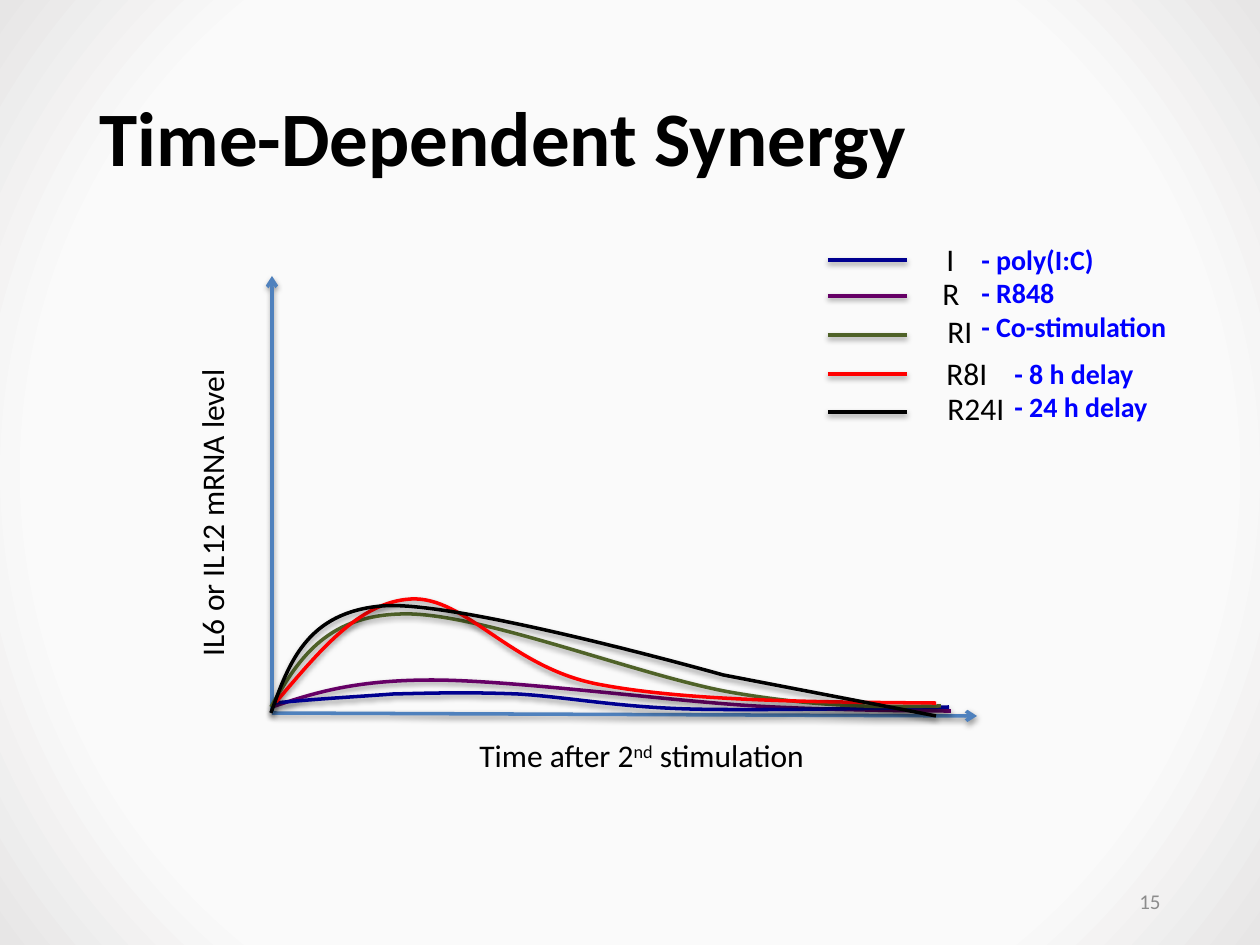
from dataclasses import dataclass

from lxml import etree
from pptx import Presentation
from pptx import util as u
from pptx.dml import color
from pptx.enum import shapes, text
from pptx.oxml import ns


@dataclass(frozen=True)
class Theme:
    font: str = "Calibri"
    ink: str = "000000"
    note: str = "0000FF"
    number: str = "8C8C8C"
    axis: str = "4F81BD"
    center: str = "FAFAFA"
    edge: str = "E7E6E6"
    title_size: int = 44
    label_size: int = 18
    note_size: int = 16
    number_size: int = 12
    line_width: int = 2


THEME = Theme()
SCALE = 914400 / 126
TITLE = "Time-Dependent Synergy"
TITLE_AREA = (87, 50, 1086, 183)
AXES = [((272, 713), (977, 716)), ((272, 713), (272, 276))]
LEGEND_X = (828, 907)
LABEL_HEIGHT = 50

SERIES = [
    {"name": "I", "color": "000090", "key_y": 260, "label": (934, 234, 84),
     "start": (275, 703),
     "points": [(314, 699), (353, 697), (393, 694),
                (433, 693), (469, 692), (518, 694),
                (567, 697), (617, 707), (689, 709),
                (761, 711), (949, 707), (949, 707)]},
    {"name": "R", "color": "660066", "key_y": 296, "label": (930, 268, 84),
     "start": (272, 707),
     "points": [(311, 694), (352, 680), (432, 680),
                (513, 680), (669, 701), (756, 706),
                (843, 711), (951, 711), (951, 711)]},
    {"name": "RI", "color": "4F6228", "key_y": 335, "label": (935, 306, 105),
     "start": (271, 707),
     "points": [(297, 662), (324, 616), (401, 614),
                (478, 611), (644, 678), (735, 693),
                (824, 708), (883, 707), (941, 706)]},
    {"name": "R8I", "color": "FF0000", "key_y": 374, "label": (934, 348, 105),
     "start": (276, 702),
     "points": [(318, 653), (358, 602), (411, 599),
                (465, 596), (510, 667), (597, 684),
                (684, 701), (810, 702), (936, 703)]},
    {"name": "R24I", "color": "000000", "key_y": 412, "label": (935, 383, 105),
     "start": (271, 713),
     "points": [(289, 663), (307, 612), (383, 606),
                (457, 600), (723, 675), (723, 675),
                (936, 716)]},
]
NOTES = [
    (["- poly(I:C)", "- R848", "- Co-stimulation"], (969, 236, 239, 115)),
    (["- 8 h delay", "- 24 h delay"], (1002, 350, 168, 81)),
]
Y_LABEL = ("IL6 or IL12 mRNA level", (30, 462, 363, LABEL_HEIGHT))
X_LABEL = (["Time after 2", "nd", " stimulation"], (467, 730, 406, LABEL_HEIGHT))
PAGE_NUMBER = ("15", (890, 876, 283, 50))


def px(value):
    return u.Emu(round(value * SCALE))


def rgb(value):
    return color.RGBColor.from_string(value)


def write(box, lines, size=THEME.label_size, ink=THEME.ink, bold=False,
          align=text.PP_ALIGN.LEFT, anchor=text.MSO_ANCHOR.TOP,
          spacing=1.0, raised=None):
    frame = box.text_frame
    frame.word_wrap = True
    frame.auto_size = text.MSO_AUTO_SIZE.NONE
    frame.vertical_anchor = anchor
    for index, line in enumerate(lines):
        para = frame.paragraphs[0] if index == 0 else frame.add_paragraph()
        para.alignment = align
        para.line_spacing = spacing
        for piece in [line] if isinstance(line, str) else line:
            span = para.add_run()
            span.text = piece
            span.font.name = THEME.font
            span.font.size = u.Pt(size)
            span.font.bold = bold
            span.font.color.rgb = rgb(ink)
            if piece == raised:
                span.font._element.set("baseline", "30000")


def add_text(page, lines, area, **style):
    box = page.shapes.add_textbox(*map(px, area))
    write(box, lines, **style)
    return box


def style_line(shape, ink, arrow=False):
    shape.line.color.rgb = rgb(ink)
    shape.line.width = u.Pt(THEME.line_width)
    properties = shape.element.find(ns.qn("p:spPr"))
    if arrow:
        stroke = properties.find(ns.qn("a:ln"))
        etree.SubElement(stroke, ns.qn("a:tailEnd"), type="arrow")
    effects = etree.SubElement(properties, ns.qn("a:effectLst"))
    shadow = etree.SubElement(effects, ns.qn("a:outerShdw"), blurRad="40000",
                              dist="20000", dir="5400000", rotWithShape="0")
    shade = etree.SubElement(shadow, ns.qn("a:srgbClr"), val=THEME.ink)
    etree.SubElement(shade, ns.qn("a:alpha"), val="38000")


def add_line(page, start, end, ink, arrow=False):
    line = page.shapes.add_connector(
        shapes.MSO_CONNECTOR.STRAIGHT, *map(px, (*start, *end)))
    style_line(line, ink, arrow)


def add_curve(page, start, points, ink):
    builder = page.shapes.build_freeform(*start, scale=SCALE)
    builder.add_line_segments(points, close=False)
    curve = builder.convert_to_shape()
    curve.fill.background()
    segments = list(curve.element.iter(ns.qn("a:lnTo")))
    for first in range(0, len(segments) - 2, 3):
        bezier = etree.Element(ns.qn("a:cubicBezTo"))
        segments[first].addprevious(bezier)
        for segment in segments[first:first + 3]:
            bezier.append(segment[0])
            segment.getparent().remove(segment)
    style_line(curve, ink)


def paint_background(page):
    fill = page.background.fill
    fill.gradient()
    stops = zip(fill.gradient_stops, (0.75, 1), (THEME.center, THEME.edge))
    for stop, position, ink in stops:
        stop.position = position
        stop.color.rgb = rgb(ink)
    linear = next(page.element.iter(ns.qn("a:lin")))
    circle = etree.Element(ns.qn("a:path"))
    circle.set("path", "circle")
    etree.SubElement(circle, ns.qn("a:fillToRect"),
                     l="50000", t="50000", r="50000", b="50000")
    linear.getparent().replace(linear, circle)


def main():
    deck = Presentation()
    deck.slide_width, deck.slide_height = u.Inches(10), u.Inches(7.5)
    page = deck.slides.add_slide(deck.slide_layouts[5])
    paint_background(page)

    title = page.shapes.title
    title.left, title.top, title.width, title.height = map(px, TITLE_AREA)
    write(title, [TITLE], size=THEME.title_size, bold=True,
          anchor=text.MSO_ANCHOR.MIDDLE, spacing=0.9)
    number, area = PAGE_NUMBER
    add_text(page, [number], area, size=THEME.number_size, ink=THEME.number,
             align=text.PP_ALIGN.RIGHT, anchor=text.MSO_ANCHOR.MIDDLE)

    for start, end in AXES:
        add_line(page, start, end, THEME.axis, arrow=True)
    label, area = Y_LABEL
    add_text(page, [label], area).rotation = 270
    pieces, area = X_LABEL
    add_text(page, [pieces], area, raised="nd")

    left, right = LEGEND_X
    for series in sorted(SERIES, key=lambda item: item["name"] == "I"):
        if series["name"] in ("I", "R"):
            add_curve(page, series["start"], series["points"], series["color"])
    for series in SERIES:
        if series["name"] not in ("I", "R"):
            add_curve(page, series["start"], series["points"], series["color"])
        add_line(page, (left, series["key_y"]), (right, series["key_y"]),
                 series["color"])
        add_text(page, [series["name"]], (*series["label"], LABEL_HEIGHT))
    for lines, area in NOTES:
        add_text(page, lines, area, size=THEME.note_size, ink=THEME.note,
                 bold=True)

    deck.save("out.pptx")


if __name__ == "__main__":
    main()
